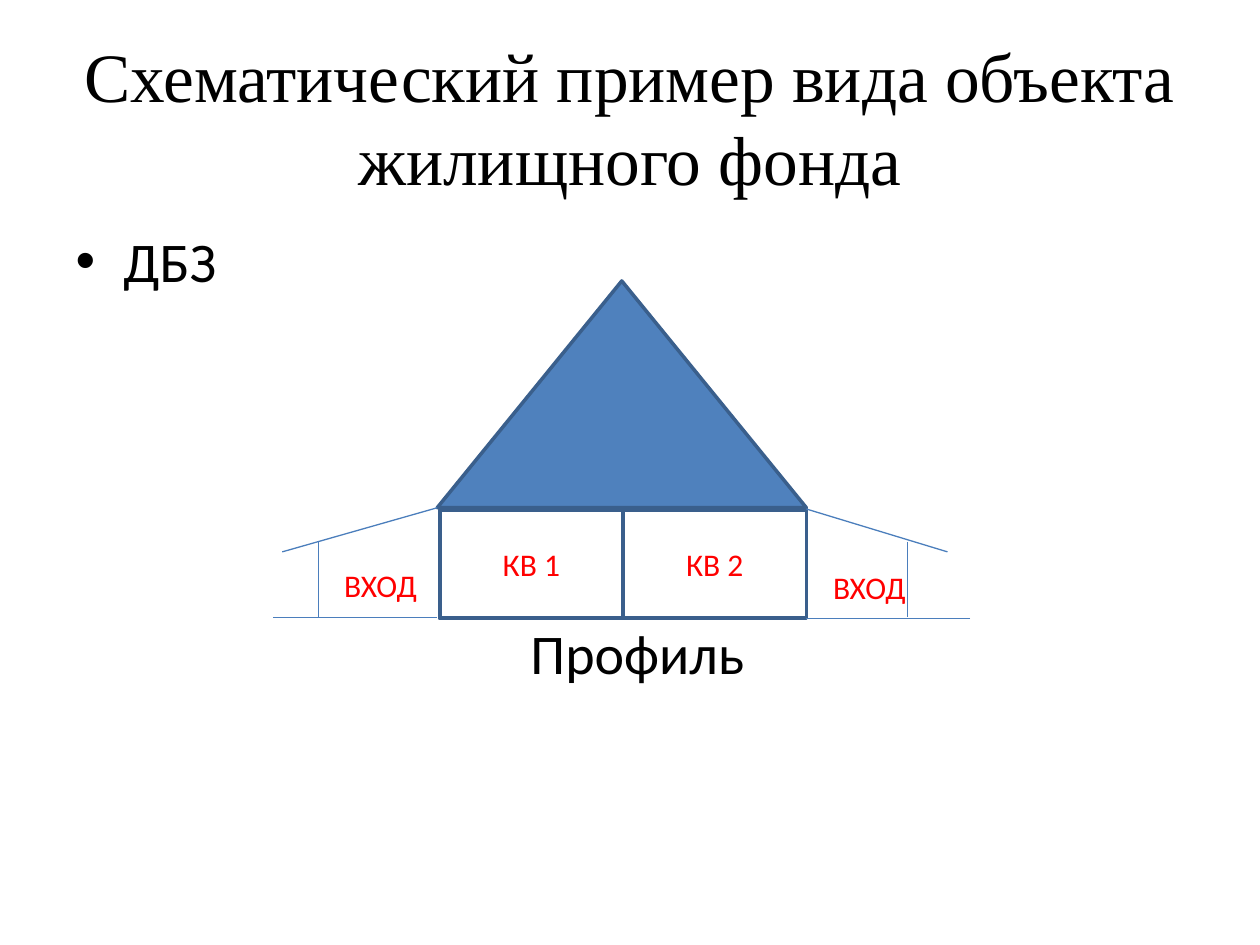
"""Build a slide with a schematic profile of a two-flat house."""
from dataclasses import dataclass
from typing import Optional

from lxml.etree import SubElement
from pptx import Presentation
from pptx.dml.color import RGBColor
from pptx.enum.shapes import MSO_CONNECTOR as CONN, MSO_SHAPE as SHAPE
from pptx.enum.text import MSO_ANCHOR as ANCHOR, MSO_AUTO_SIZE as AUTO, PP_ALIGN as ALIGN
from pptx.oxml.ns import qn
from pptx.util import Inches, Pt

COLS, ROWS = 100, 75
SLIDE_W, SLIDE_H = Inches(10), Inches(7.5)
COLORS = {"text": "000000", "label": "FF0000", "paper": "FFFFFF",
          "roof": "4F81BD", "wall": "3A5F8C", "thin": "4B7EBC"}


@dataclass
class Block:
    col: float
    row: float
    cols: float
    rows: float
    label: str = ""
    fill: Optional[str] = None
    line: str = "wall"
    kind: SHAPE = SHAPE.RECTANGLE


@dataclass
class Stroke:
    col1: float
    row1: float
    col2: float
    row2: float


ENTRANCES = [Block(64, 42.4, 10, 8.4, "ВХОД", "paper", "paper"),
             Block(25.2, 42.2, 10, 8.4, "ВХОД", "paper", "paper")]
FLAT_W = 14.55
HOUSE = [Block(34.9, 40.5, 2 * FLAT_W, 8.6)]
HOUSE += [Block(34.9 + i * FLAT_W, 40.5, FLAT_W, 8.5, f"КВ {i + 1}") for i in range(2)]
HOUSE.append(Block(34.7, 22.3, 29.3, 18, fill="roof", kind=SHAPE.ISOSCELES_TRIANGLE))
PORCHES = [Stroke(34.7, 40.3, 22.4, 43.8), Stroke(25.3, 43, 25.3, 49),
           Stroke(34.7, 49, 21.7, 49), Stroke(75.2, 43.8, 64, 40.4),
           Stroke(72, 43, 72, 49), Stroke(77, 49.1, 64, 49.1)]


def x(col: float) -> int:
    return round(SLIDE_W * col / COLS)


def y(row: float) -> int:
    return round(SLIDE_H * row / ROWS)


def rgb(name: str) -> RGBColor:
    return RGBColor.from_string(COLORS[name])


def write(p, text: str, *, size: float, font: str = "Calibri",
          color: str = "text", align=ALIGN.CENTER) -> None:
    p.alignment = align
    r = p.add_run()
    r.text = text
    r.font.size, r.font.name = Pt(size), font
    r.font.color.rgb = rgb(color)


def place(sp, col: float, row: float, cols: float, rows: float):
    sp.left, sp.top, sp.width, sp.height = x(col), y(row), x(cols), y(rows)
    tf = sp.text_frame
    tf.word_wrap, tf.auto_size = True, AUTO.NONE
    return tf


def draw_block(s, b: Block) -> None:
    sp = s.shapes.add_shape(b.kind, x(b.col), y(b.row), x(b.cols), y(b.rows))
    sp.shadow.inherit = False
    if b.fill:
        sp.fill.solid()
        sp.fill.fore_color.rgb = rgb(b.fill)
    else:
        sp.fill.background()
    sp.line.color.rgb, sp.line.width = rgb(b.line), Pt(2)
    if b.label:
        sp.text_frame.vertical_anchor = ANCHOR.MIDDLE
        write(sp.text_frame.paragraphs[0], b.label, size=18, color="label")


def draw_stroke(s, k: Stroke) -> None:
    c = s.shapes.add_connector(CONN.STRAIGHT, x(k.col1), y(k.row1), x(k.col2), y(k.row2))
    c.line.color.rgb, c.line.width = rgb("thin"), Pt(0.75)
    SubElement(c._element.spPr, qn("a:effectLst"))


def set_bullet(p, margin: float, indent: float, char: str = "") -> None:
    pPr = p._p.get_or_add_pPr()
    pPr.set("marL", str(Inches(margin)))
    pPr.set("indent", str(Inches(indent)))
    if char:
        SubElement(pPr, qn("a:buFont")).set("typeface", "Arial")
        SubElement(pPr, qn("a:buChar")).set("char", char)
    else:
        SubElement(pPr, qn("a:buNone"))


def main() -> None:
    prs = Presentation()
    prs.slide_width, prs.slide_height = SLIDE_W, SLIDE_H
    s = prs.slides.add_slide(prs.slide_layouts[1])

    tf = place(s.shapes.title, 5, 3, 90, 12.5)
    tf.vertical_anchor = ANCHOR.MIDDLE
    write(tf.paragraphs[0], "Схематический пример вида объекта жилищного фонда",
          size=39.6, font="Times New Roman")

    tf = place(s.placeholders[1], 5, 17.5, 90, 46.8)
    item, caption = tf.paragraphs[0], tf.add_paragraph()
    write(item, "ДБЗ", size=32, align=ALIGN.LEFT)
    set_bullet(item, 0.38, -0.38, "•")
    write(caption, "Профиль", size=32)
    caption.space_before = Pt(185.5)
    set_bullet(caption, 0.12, 0)

    for b in ENTRANCES + HOUSE:
        draw_block(s, b)
    for k in PORCHES:
        draw_stroke(s, k)
    prs.save("out.pptx")


if __name__ == "__main__":
    main()
